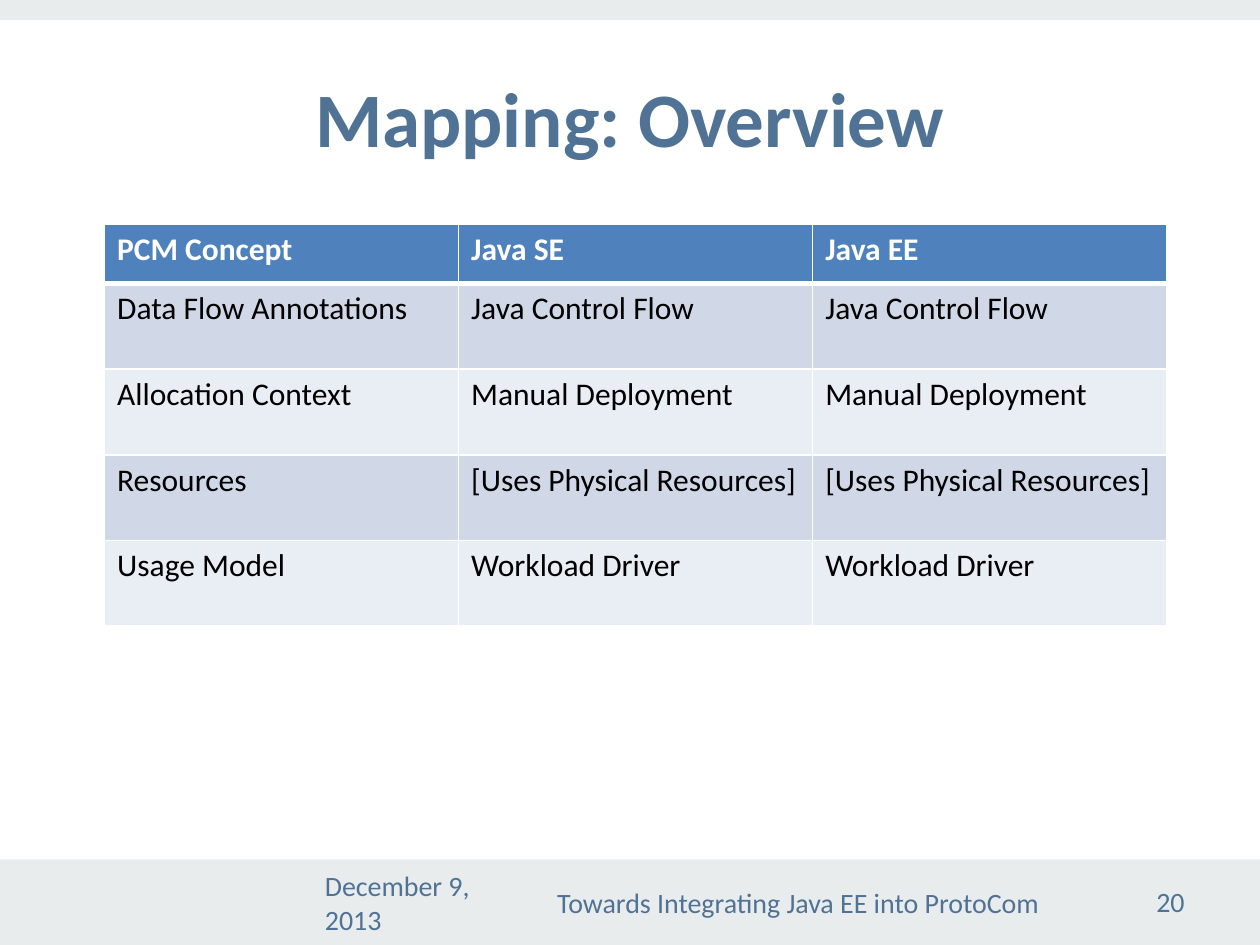
from lxml import etree
from pptx import Presentation
from pptx import util as u
from pptx.dml.color import RGBColor
from pptx.enum import shapes, text
from pptx.oxml import ns

WIDTH, HEIGHT = u.Inches(10), u.Inches(7.5)
FONT = "Calibri"
SLATE = RGBColor(0x50, 0x72, 0x94)
MIST = RGBColor(0xE9, 0xEC, 0xED)
HEADER = RGBColor(0x4F, 0x81, 0xBD)
BANDS = (RGBColor(0xD0, 0xD8, 0xE8), RGBColor(0xE9, 0xED, 0xF4))
WHITE = RGBColor(0xFF, 0xFF, 0xFF)
BLACK = RGBColor(0, 0, 0)

MAPPING = (
    ("PCM Concept", "Java SE", "Java EE"),
    ("Data Flow Annotations", "Java Control Flow", "Java Control Flow"),
    ("Allocation Context", "Manual Deployment", "Manual Deployment"),
    ("Resources", "[Uses Physical Resources]", "[Uses Physical Resources]"),
    ("Usage Model", "Workload Driver", "Workload Driver"),
)


def style_text(frame, size, color, bold=False, align=text.PP_ALIGN.LEFT):
    """Format every run of a text frame alike."""
    for para in frame.paragraphs:
        para.alignment = align
        for span in para.runs:
            span.font.name, span.font.size = FONT, u.Pt(size)
            span.font.bold, span.font.color.rgb = bold, color


def add_band(page, top, height):
    """Add a plain band across the whole page."""
    band = page.shapes.add_shape(shapes.MSO_SHAPE.RECTANGLE, 0, u.Inches(top), WIDTH, u.Inches(height))
    band.shadow.inherit = False
    band.fill.solid()
    band.fill.fore_color.rgb = MIST
    band.line.fill.background()


def add_label(page, words, place, size, align, bold=False):
    """Add a vertically centred text box at a place given in inches."""
    box = page.shapes.add_textbox(*map(u.Inches, place))
    frame = box.text_frame
    frame.word_wrap = True
    frame.vertical_anchor = text.MSO_ANCHOR.MIDDLE
    frame.text = words
    style_text(frame, size, SLATE, bold, align)


def add_border(cell, side, points):
    """Draw one white border of a cell."""
    line = etree.SubElement(cell._tc.get_or_add_tcPr(), ns.qn(f"a:ln{side}"), w=str(u.Pt(points)))
    fill = etree.SubElement(line, ns.qn("a:solidFill"))
    etree.SubElement(fill, ns.qn("a:srgbClr"), val=str(WHITE))


def fill_cell(cell, words, row):
    """Write a cell and style it as header or banded body."""
    is_header = row == 0
    cell.text = words
    style_text(cell.text_frame, 18, WHITE if is_header else BLACK, is_header)
    for side in "LRTB":
        heavy = (row, side) in ((0, "B"), (1, "T"))
        add_border(cell, side, 3 if heavy else 1)
    cell.fill.solid()
    cell.fill.fore_color.rgb = HEADER if is_header else BANDS[(row - 1) % 2]


def add_mapping_table(page):
    """Add the concept table with equal columns and body rows."""
    columns = len(MAPPING[0])
    place = map(u.Inches, (0.83, 1.78, 8.43, 3.19))
    table = page.shapes.add_table(len(MAPPING), columns, *place).table
    for column in table.columns:
        column.width = u.Inches(8.43 / columns)
    for row, entries in enumerate(MAPPING):
        table.rows[row].height = u.Inches(0.68 if row else 0.47)
        for column, words in enumerate(entries):
            fill_cell(table.cell(row, column), words, row)


def main():
    """Build and save the slide."""
    deck = Presentation()
    deck.slide_width, deck.slide_height = WIDTH, HEIGHT
    page = deck.slides.add_slide(deck.slide_layouts[6])
    add_band(page, 6.82, 0.68)
    add_band(page, 0, 0.16)
    align = text.PP_ALIGN
    add_label(page, "Mapping: Overview", (0.5, 0.3, 9, 1.25), 44, align.CENTER, bold=True)
    add_label(page, "December 9, 2013", (2.48, 6.96, 1.42, 0.4), 16, align.LEFT)
    add_label(page, "Towards Integrating Java EE into ProtoCom", (4.21, 6.96, 4.25, 0.4), 16, align.CENTER)
    add_label(page, "20", (8.86, 6.95, 0.64, 0.4), 16, align.RIGHT)
    add_mapping_table(page)
    deck.save("out.pptx")


if __name__ == "__main__":
    main()
